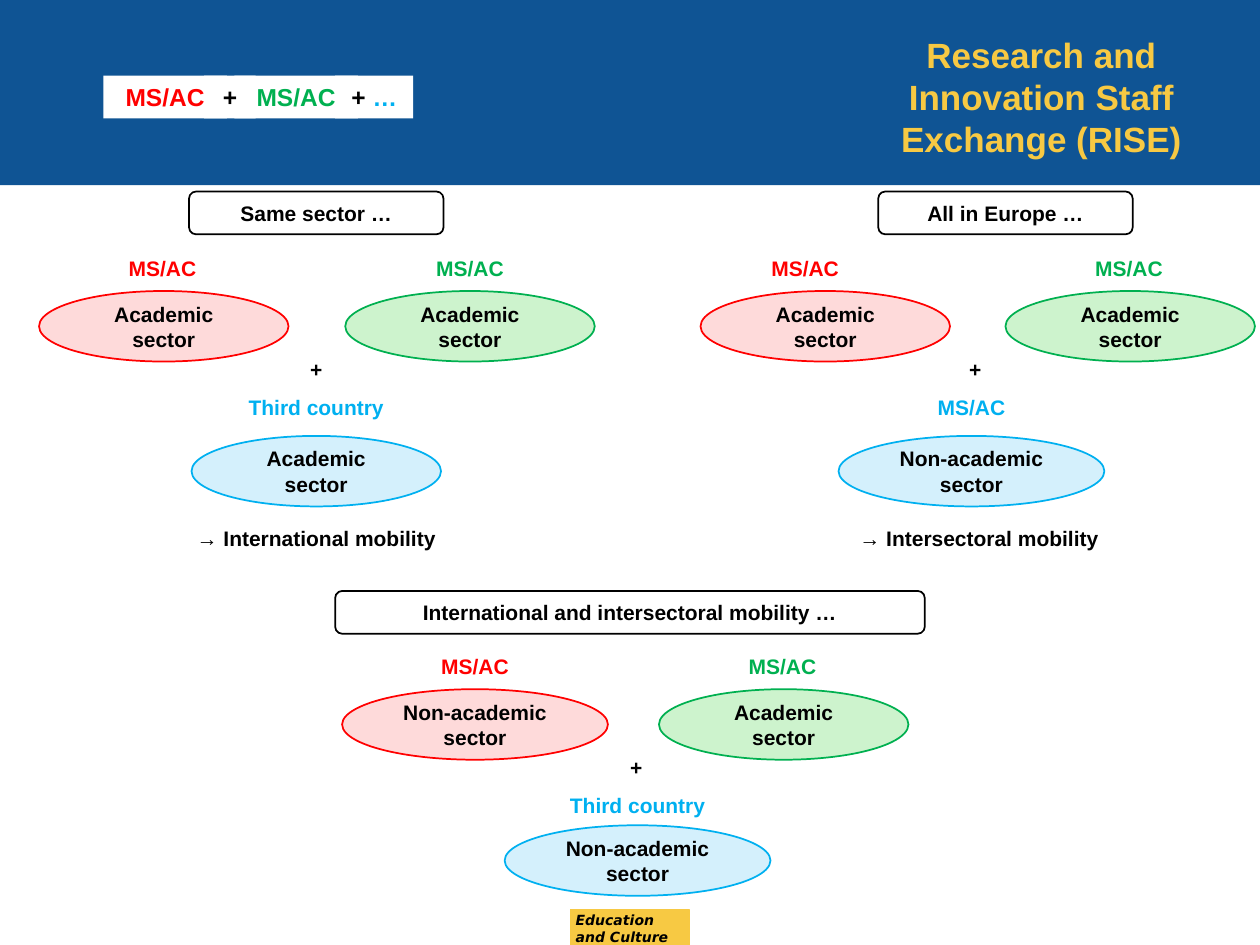
"""Build the RISE slide showing three kinds of staff mobility."""
from pptx import Presentation
from pptx.dml.color import RGBColor
from pptx.enum import shapes as shp, text as txt
from pptx.util import Inches, Pt

COLORS = {
    "blue": "0F5494", "yellow": "F7C943", "white": "FFFFFF", "black": "000000",
    "red": "FF0000", "green": "00B050", "cyan": "00B0F0",
    "pale_red": "FEDADA", "pale_green": "CDF3CD", "pale_cyan": "D4F0FC",
}
SHAPE = shp.MSO_SHAPE
ACADEMIC, NON_ACADEMIC = "Academic sector", "Non-academic sector"
ELLIPSE_WIDTH = {ACADEMIC: 1.98, NON_ACADEMIC: 2.11}


def rgb(name):
    return RGBColor.from_string(COLORS[name])


def set_text(sp, text, color="black", size=12, align=txt.PP_ALIGN.CENTER,
             font="Arial", italic=None):
    tf = sp.text_frame
    tf.word_wrap = True
    tf.auto_size = txt.MSO_AUTO_SIZE.NONE
    tf.vertical_anchor = txt.MSO_ANCHOR.MIDDLE
    p = tf.paragraphs[0]
    p.text = text
    p.alignment = align
    p.font.name, p.font.size = font, Pt(size)
    p.font.bold, p.font.italic = True, italic
    p.font.color.rgb = rgb(color)
    return p


def add_shape(parent, kind, x, y, w, h, fill, line=None, line_width=1):
    sp = parent.shapes.add_shape(kind, Inches(x), Inches(y), Inches(w), Inches(h))
    sp.shadow.inherit = False
    sp.fill.solid()
    sp.fill.fore_color.rgb = rgb(fill)
    if line:
        sp.line.color.rgb = rgb(line)
        sp.line.width = Pt(line_width)
    else:
        sp.line.fill.background()
    return sp


def add_label(parent, text, center, y, w, color="black"):
    sp = parent.shapes.add_textbox(
        Inches(center - w / 2), Inches(y), Inches(w), Inches(0.3))
    set_text(sp, text, color)


def add_ellipse(parent, text, center, y, color):
    w = ELLIPSE_WIDTH[text]
    sp = add_shape(parent, SHAPE.OVAL, center - w / 2, y, w, 0.56,
                   "pale_" + color, color)
    set_text(sp, text)


def add_heading(s, text, x, y, w):
    sp = add_shape(s, SHAPE.ROUNDED_RECTANGLE, x, y, w, 0.34, "white", "black")
    set_text(sp, text)


def add_cluster(s, y, red, green, partner, plus_x, partner_drop=0.38):
    """Draw two member-state sectors plus a partner sector below them."""
    group = s.shapes.add_group_shape()
    for color, (center, label_center, sector) in (("red", red), ("green", green)):
        add_ellipse(group, sector, center, y + 0.33, color)
        add_label(group, "MS/AC", label_center, y, 1.02, color)
    center, country, sector = partner
    partner_y = y + 1.1
    add_ellipse(group, sector, center, partner_y + partner_drop, "cyan")
    add_label(group, country, center, partner_y, 1.69, "cyan")
    add_label(group, "+", plus_x, y + 0.8, 0.43)


def add_header(s):
    add_shape(s, SHAPE.RECTANGLE, 0, 0, 10, 1.47, "blue")
    title = s.shapes.title
    title.left, title.top = Inches(6.65), Inches(0.21)
    title.width, title.height = Inches(3.23), Inches(1.11)
    set_text(title, "Research and Innovation Staff Exchange (RISE)", "yellow", 20)
    title.element.getparent().append(title.element)


def add_formula(s):
    group = s.shapes.add_group_shape()
    for text, x, w, color in (
        ("MS/AC", 0.82, 0.98, "red"),
        ("MS/AC", 1.86, 0.98, "green"),
        ("+", 1.62, 0.41, "black"),
        ("+ ", 2.66, 0.62, "black"),
    ):
        sp = add_shape(group, SHAPE.RECTANGLE, x, 0.6, w, 0.34, "white")
        p = set_text(sp, text, color, 14)
    r = p.add_run()
    r.text = "…"
    r.font.color.rgb = rgb("cyan")


def add_footer(s):
    add_shape(s, SHAPE.RECTANGLE, 4.53, 7.22, 0.94, 0.28, "yellow", "yellow", 0.75)
    sp = s.shapes.add_textbox(Inches(4.47), Inches(7.17), Inches(2.06), Inches(0.4))
    set_text(sp, "Education\vand Culture", size=8, align=txt.PP_ALIGN.LEFT,
             font="DejaVu Sans", italic=True)


def main():
    prs = Presentation()
    prs.slide_width, prs.slide_height = Inches(10), Inches(7.5)
    s = prs.slides.add_slide(prs.slide_layouts[5])

    add_footer(s)
    add_header(s)
    add_formula(s)

    add_heading(s, "Same sector …", 1.5, 1.52, 2.02)
    add_cluster(s, 1.98, (1.3, 1.29, ACADEMIC), (3.73, 3.73, ACADEMIC),
                (2.51, "Third country", ACADEMIC), 2.51)
    add_label(s, "→ International mobility", 2.51, 4.12, 2.79)

    add_heading(s, "All in Europe …", 6.97, 1.52, 2.02)
    add_cluster(s, 1.98, (6.55, 6.39, ACADEMIC), (8.97, 8.96, ACADEMIC),
                (7.71, "MS/AC", NON_ACADEMIC), 7.74)
    add_label(s, "→ Intersectoral mobility", 7.77, 4.12, 2.79)

    add_heading(s, "International and intersectoral mobility …", 2.66, 4.69, 4.68)
    add_cluster(s, 5.14, (3.77, 3.77, NON_ACADEMIC), (6.22, 6.21, ACADEMIC),
                (5.06, "Third country", NON_ACADEMIC), 5.05, partner_drop=0.31)

    prs.save("out.pptx")


if __name__ == "__main__":
    main()
